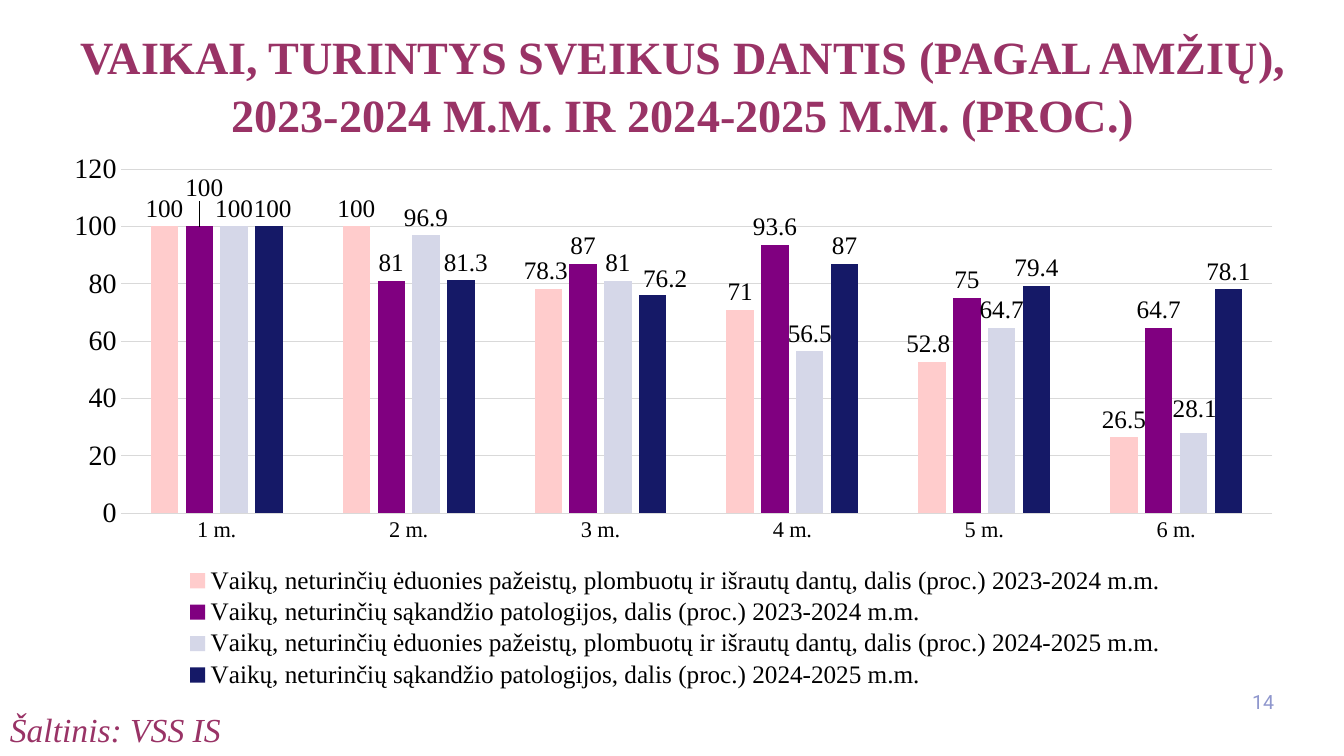
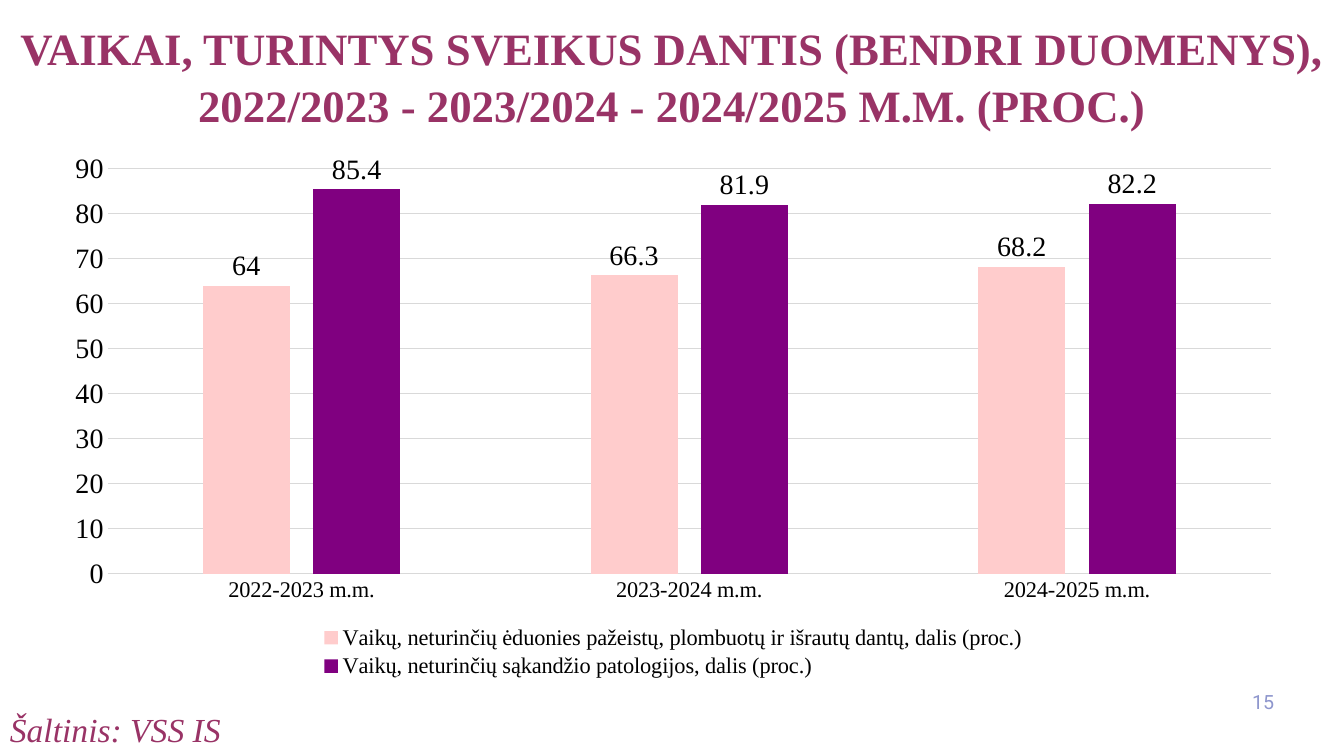
from dataclasses import dataclass, field

from lxml import etree
from pptx import Presentation
from pptx import util as u
from pptx.chart.data import CategoryChartData
from pptx.dml.color import RGBColor
from pptx.enum import chart as ch
from pptx.enum import text as tx
from pptx.oxml.ns import qn

# Shared look
PLUM = RGBColor(0x99, 0x33, 0x66)
PINK = RGBColor(0xFF, 0xCC, 0xCC)
PURPLE = RGBColor(0x80, 0x00, 0x80)
PALE = RGBColor(0xD5, 0xD7, 0xE8)
NAVY = RGBColor(0x15, 0x19, 0x67)
GRID = RGBColor(0xD9, 0xD9, 0xD9)
LILAC = RGBColor(0x8E, 0x96, 0xCD)
BLACK = RGBColor(0, 0, 0)
SERIF = "Times New Roman"
FIRST = 14

DECAY = "Vaikų, neturinčių ėduonies pažeistų, plombuotų ir išrautų dantų, dalis (proc.)"
BITE = "Vaikų, neturinčių sąkandžio patologijos, dalis (proc.)"

Box = tuple[float, float, float, float]


@dataclass
class Series:
    name: str
    color: RGBColor
    vals: list[float]
    # Label shifts in percent of the chart size, by point
    shifts: dict[int, tuple[float, float]] = field(default_factory=dict)


@dataclass
class Page:
    title: list[str]
    size: int
    head: Box  # cm
    frame: Box  # cm
    plot: Box  # percent of the chart
    key: Box  # percent of the chart
    top: int
    step: int
    label: int
    legend: int
    cats: list[str]
    series: list[Series]


PAGES = [
    Page(
        ["VAIKAI, TURINTYS SVEIKUS DANTIS (PAGAL AMŽIŲ), "
         "2023-2024 M.M. IR 2024-2025 M.M. (PROC.)"],
        33, (0.58, 0.51, 33.27, 3.07), (1.22, 3.58, 31.47, 13.92),
        (5.8, 4.9, 92.2, 62.3), (10.7, 76.2, 79, 23.5), 120, 20, 18, 18,
        [f"{n} m." for n in range(1, 7)],
        [
            Series(f"{DECAY} 2023-2024 m.m.", PINK, [100, 100, 78.3, 71, 52.8, 26.5],
                   {2: (-0.2, 0), 4: (-0.3, 0)}),
            Series(f"{BITE} 2023-2024 m.m.", PURPLE, [100, 81, 87, 93.6, 75, 64.7],
                   {0: (0.4, -3.8)}),
            Series(f"{DECAY} 2024-2025 m.m.", PALE, [100, 96.9, 81, 56.5, 64.7, 28.1],
                   {5: (0.1, -1.1)}),
            Series(f"{BITE} 2024-2025 m.m.", NAVY, [100, 81.3, 76.2, 87, 79.4, 78.1],
                   {0: (0.3, 0), 1: (0.4, 0.2), 2: (1, 0.3)}),
        ],
    ),
    Page(
        ["VAIKAI, TURINTYS SVEIKUS DANTIS (BENDRI DUOMENYS),",
         "2022/2023 - 2023/2024 - 2024/2025 M.M. (PROC.)"],
        32, (0, 0.33, 33.87, 3), (1.3, 3.58, 31.39, 13.67),
        (4.5, 4.9, 93.4, 74.7), (21.4, 88.5, 57, 11), 90, 10, 20, 16,
        [f"{y}-{y + 1} m.m." for y in range(2022, 2025)],
        [
            Series(DECAY, PINK, [64, 66.3, 68.2]),
            Series(BITE, PURPLE, [85.4, 81.9, 82.2]),
        ],
    ),
]


def style(font, size: int, color: RGBColor = BLACK, face: str = SERIF) -> None:
    font.name, font.size = face, u.Pt(size)
    font.color.rgb = color


def note(slide, box: Box, words: str, size: int, color: RGBColor, face: str = SERIF):
    """Add a line of text and return its paragraph."""
    frame = slide.shapes.add_textbox(*map(u.Cm, box)).text_frame
    frame.word_wrap = True
    para = frame.paragraphs[0]
    para.text = words
    style(para.font, size, color, face)
    return para


def place(item, spot: int, **parts: float | str) -> None:
    """Give a chart part a manual layout; numbers are percentages."""
    for old in item.findall(qn("c:layout")):
        item.remove(old)
    layout = etree.Element(qn("c:layout"))
    manual = etree.SubElement(layout, qn("c:manualLayout"))
    for tag, val in parts.items():
        mark = val if isinstance(val, str) else f"{val / 100:.3f}"
        etree.SubElement(manual, qn(f"c:{tag}")).set("val", mark)
    item.insert(spot, layout)


def fit(item, spot: int, box: Box, **lead: str) -> None:
    place(item, spot, **lead, xMode="edge", yMode="edge", **dict(zip("xywh", box)))


def add_head(slide, page: Page) -> None:
    title = slide.shapes.title
    title.left, title.top, title.width, title.height = map(u.Cm, page.head)
    frame = title.text_frame
    frame.text = "\n".join(page.title)
    frame.word_wrap = True
    frame.auto_size = tx.MSO_AUTO_SIZE.NONE
    frame.vertical_anchor = tx.MSO_ANCHOR.TOP
    for para in frame.paragraphs:
        para.alignment = tx.PP_ALIGN.CENTER
        para.line_spacing = 1.05
        para.space_before = u.Pt(0)
        style(para.font, page.size, PLUM)
        para.font.bold = True


def add_bars(slide, page: Page) -> None:
    data = CategoryChartData()
    data.categories = page.cats
    for row in page.series:
        data.add_series(row.name, row.vals)
    chart = slide.shapes.add_chart(
        ch.XL_CHART_TYPE.COLUMN_CLUSTERED, *map(u.Cm, page.frame), data).chart
    chart.has_title = False
    style(chart.font, 10, face="Calibri")

    # Axes
    cat, val = chart.category_axis, chart.value_axis
    for axis, size in ((cat, 16), (val, 20)):
        axis.major_tick_mark = axis.minor_tick_mark = ch.XL_TICK_MARK.NONE
        style(axis.tick_labels.font, size)
    val.minimum_scale, val.maximum_scale, val.major_unit = 0, page.top, page.step
    val.format.line.fill.background()
    val.has_major_gridlines = True
    for line in (cat.format.line, val.major_gridlines.format.line):
        line.color.rgb, line.width = GRID, u.Pt(0.75)

    # Legend and plot area
    chart.has_legend = True
    chart.legend.position = ch.XL_LEGEND_POSITION.BOTTOM
    chart.legend.include_in_layout = False
    style(chart.legend.font, page.legend)
    fit(chart.element.xpath(".//c:legend")[0], 1, page.key)
    fit(chart.element.xpath(".//c:plotArea")[0], 0, page.plot, layoutTarget="inner")

    # Columns and their labels
    plot = chart.plots[0]
    plot.gap_width, plot.overlap, plot.vary_by_categories = 219, -27, False
    for rank, (bars, row) in enumerate(zip(plot.series, page.series), 1):
        bars.format.fill.solid()
        bars.format.fill.fore_color.rgb = row.color
        bars.invert_if_negative = False
        tags = bars.data_labels
        tags.show_value = True
        tags.position = ch.XL_LABEL_POSITION.OUTSIDE_END
        style(tags.font, page.label)
        for spot, (x, y) in row.shifts.items():
            tag = bars.points[spot].data_label
            tag.position = ch.XL_LABEL_POSITION.OUTSIDE_END
            style(tag.font, page.label)
            query = f"(.//c:ser)[{rank}]//c:dLbl[c:idx/@val='{spot}']"
            place(chart.element.xpath(query)[0], 1, x=x, y=y)


def add_foot(slide, number: int) -> None:
    para = note(slide, (31.04, 17.25, 1.32, 1.02), str(number), 14, LILAC, "Roboto")
    para.alignment = tx.PP_ALIGN.RIGHT
    para = note(slide, (0, 17.75, 16.93, 1.28), "Šaltinis: VSS IS", 24, PLUM)
    para.font.italic = True


def main() -> None:
    prs = Presentation()
    prs.slide_width, prs.slide_height = u.Cm(33.87), u.Cm(19.05)
    for number, page in enumerate(PAGES, FIRST):
        slide = prs.slides.add_slide(prs.slide_layouts[5])
        add_bars(slide, page)
        add_head(slide, page)
        add_foot(slide, number)
    prs.save("out.pptx")


if __name__ == "__main__":
    main()
